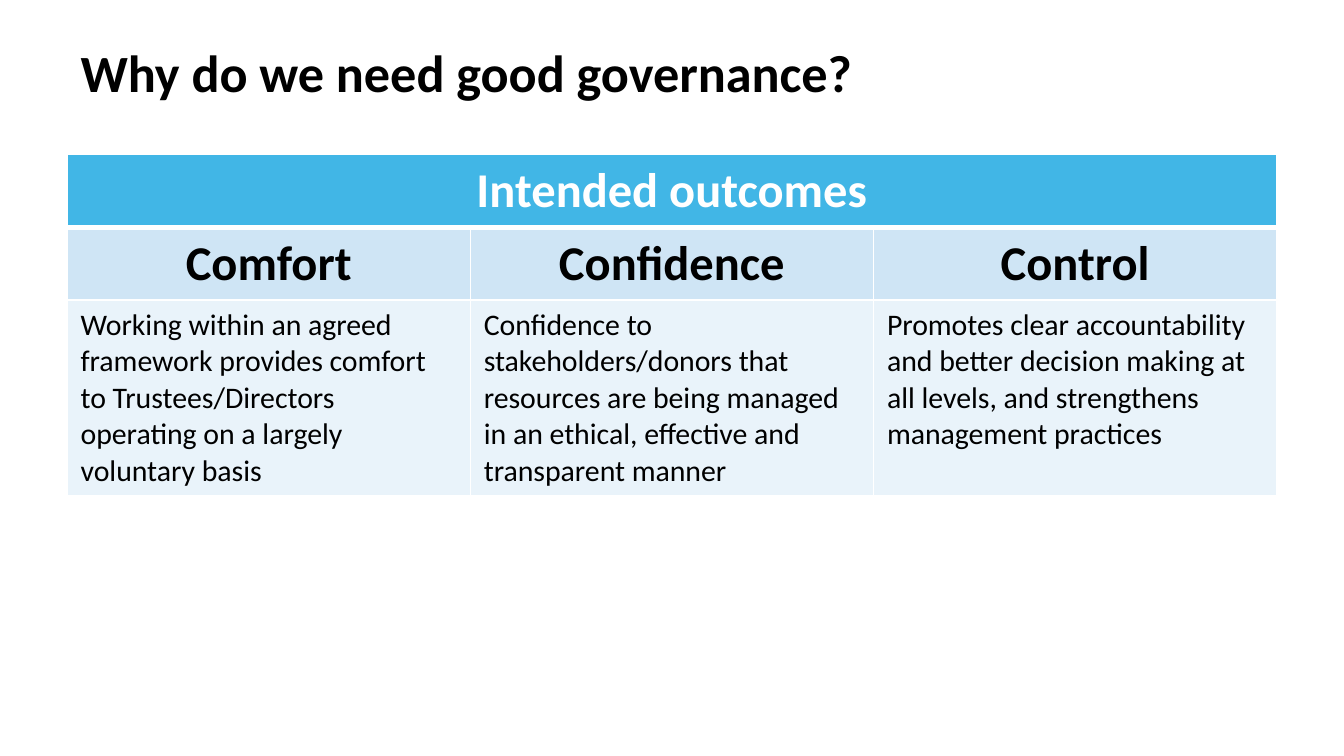
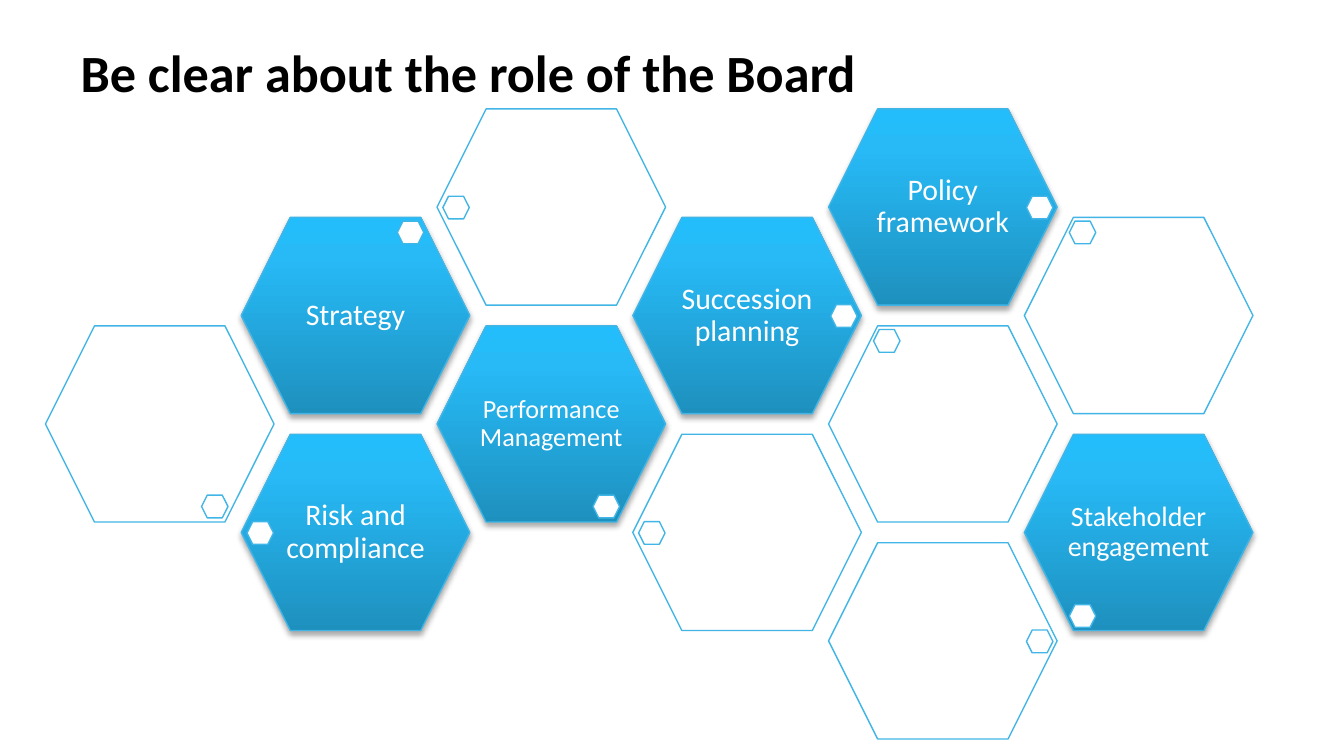
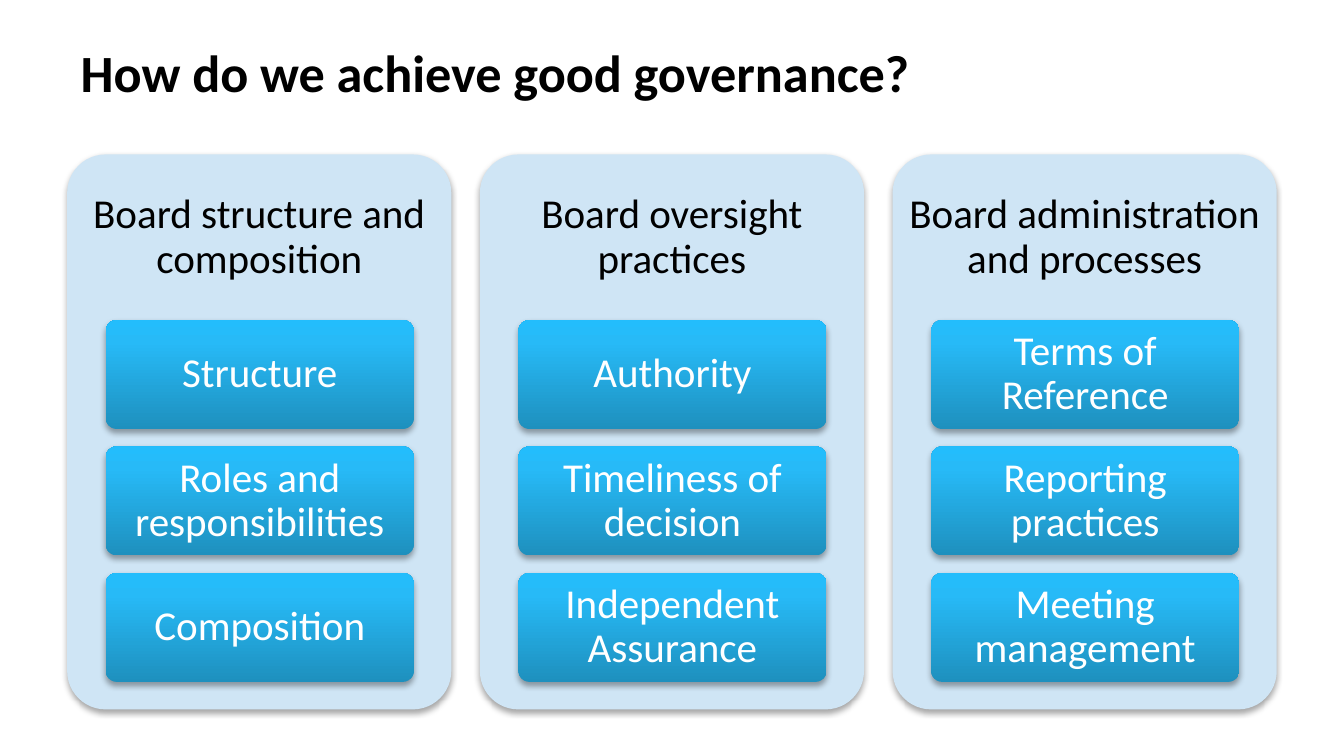
"""Builds three slides on good governance: outcomes, board role and practices."""
from copy import deepcopy

from lxml.etree import SubElement
from pptx import Presentation
from pptx.dml.color import RGBColor
from pptx.enum.shapes import MSO_SHAPE
from pptx.enum.text import MSO_ANCHOR as Anchor, PP_ALIGN as Align
from pptx.oxml.ns import qn
from pptx.util import Cm, Pt

FONT = "Calibri"
COLORS = {
    "text": "000000",
    "white": "FFFFFF",
    "accent": "41B6E6",
    "pale": "CFE5F5",
    "paler": "E9F3FA",
    "shadow": "000000",
}
GRADIENT = [(0, "1E90BE"), (0.8, "27BAF7"), (1, "23BDFC")]
MARGIN, CONTENT_WIDTH, CONTENT_TOP = 1.27, 22.86, 2.92

OUTCOMES = {
    "Comfort": "Working within an agreed framework provides comfort to "
               "Trustees/Directors operating on a largely voluntary basis",
    "Confidence": "Confidence to stakeholders/donors that resources are being "
                  "managed in an ethical, effective and transparent manner",
    "Control": "Promotes clear accountability and better decision making at "
               "all levels, and strengthens management practices",
}

HEXAGON_WIDTH, HEXAGON_HEIGHT = 4.32, 3.71
MARKER_OFFSETS = {
    "left": (0.11, 1.65),
    "right": (3.74, 1.65),
    "top left": (0.85, 0.07),
    "top right": (2.95, 0.07),
    "bottom left": (0.85, 3.22),
    "bottom right": (2.95, 3.2),
}
BOARD_ROLES = [
    (1, 3, "left", "Risk and compliance", 16),
    (0, 2, "bottom right", None, None),
    (2, 2, "bottom right", "Performance Management", 14),
    (3, 3, "left", None, None),
    (1, 1, "top right", "Strategy", 16),
    (2, 0, "left", None, None),
    (3, 1, "right", "Succession planning", 16),
    (4, 2, "top left", None, None),
    (4, 0, "right", "Policy framework", 16),
    (5, 1, "top left", None, None),
    (5, 3, "bottom left", "Stakeholder engagement", 15),
    (4, 4, "right", None, None),
]

PRACTICES = {
    "Board structure and composition":
        ["Structure", "Roles and responsibilities", "Composition"],
    "Board oversight practices":
        ["Authority", "Timeliness of decision", "Independent Assurance"],
    "Board administration and processes":
        ["Terms of Reference", "Reporting practices", "Meeting management"],
}


def rgb(name):
    return RGBColor.from_string(COLORS[name])


def format_paragraph(paragraph, size, color, bold=False, align=Align.LEFT):
    paragraph.alignment = align
    font = paragraph.font
    font.name, font.size, font.bold = FONT, Pt(size), bold
    font.color.rgb = rgb(color)


def add_titled_slide(presentation, text):
    slide = presentation.slides.add_slide(presentation.slide_layouts[5])
    title = slide.shapes.title
    title.left, title.top = Cm(MARGIN), Cm(0.15)
    title.width, title.height = Cm(CONTENT_WIDTH), Cm(2.39)
    title.text_frame.text = text
    title.text_frame.vertical_anchor = Anchor.MIDDLE
    format_paragraph(title.text_frame.paragraphs[0], 28, "text", bold=True)
    return slide


def add_flat_shape(slide, kind, left, top, width, height, fill, outlined=False):
    shape = slide.shapes.add_shape(kind, Cm(left), Cm(top), Cm(width), Cm(height))
    shape.shadow.inherit = False
    shape.fill.solid()
    shape.fill.fore_color.rgb = rgb(fill)
    if outlined:
        shape.line.color.rgb = rgb("accent")
        shape.line.width = Pt(0.75)
    else:
        shape.line.fill.background()
    return shape


def apply_gradient(shape):
    fill = shape.fill
    fill.gradient()
    fill.gradient_angle = 90
    stop_list = shape._element.spPr.find(qn("a:gradFill")).find(qn("a:gsLst"))
    stop_list.append(deepcopy(stop_list[-1]))
    for stop, (position, color) in zip(fill.gradient_stops, GRADIENT):
        stop.position = position
        stop.color.rgb = RGBColor.from_string(color)


def add_shadow(shape):
    effects = shape._element.spPr.find(qn("a:effectLst"))
    shadow = SubElement(effects, qn("a:outerShdw"), blurRad="40000",
                        dist="23000", dir="5400000", rotWithShape="0")
    color = SubElement(shadow, qn("a:srgbClr"), val=COLORS["shadow"])
    SubElement(color, qn("a:alpha"), val="35000")


def set_transparency(shape, opacity):
    color = shape._element.spPr.find(qn("a:solidFill")).find(qn("a:srgbClr"))
    SubElement(color, qn("a:alpha"), val=str(opacity * 1000))


def write_label(shape, text, size, color, side, top, bottom):
    frame = shape.text_frame
    frame.word_wrap = True
    frame.vertical_anchor = Anchor.MIDDLE
    frame.margin_left = frame.margin_right = Cm(side)
    frame.margin_top, frame.margin_bottom = Cm(top), Cm(bottom)
    frame.text = text
    paragraph = frame.paragraphs[0]
    paragraph.line_spacing = 0.9
    format_paragraph(paragraph, size, color, align=Align.CENTER)


def set_borders(cell, top, bottom):
    properties = cell._tc.get_or_add_tcPr()
    for side, width in (("L", 1), ("R", 1), ("T", top), ("B", bottom)):
        line = SubElement(properties, qn(f"a:ln{side}"), w=str(Pt(width)))
        fill = SubElement(line, qn("a:solidFill"))
        SubElement(fill, qn("a:srgbClr"), val=COLORS["white"])


def add_outcomes_table(slide):
    row_styles = [
        (1.3, "accent", 26, "white", True, Align.CENTER, 1, 3),
        (1.35, "pale", 26, "text", True, Align.CENTER, 3, 1),
        (3.7, "paler", 16, "text", False, Align.LEFT, 1, 1),
    ]
    rows = [["Intended outcomes", "", ""], list(OUTCOMES), list(OUTCOMES.values())]
    height = sum(style[0] for style in row_styles)
    table = slide.shapes.add_table(3, 3, Cm(MARGIN), Cm(CONTENT_TOP),
                                   Cm(CONTENT_WIDTH), Cm(height)).table
    table.cell(0, 0).merge(table.cell(0, 2))
    for row, texts, style in zip(table.rows, rows, row_styles):
        row_height, fill, size, color, bold, align, top, bottom = style
        row.height = Cm(row_height)
        for cell, text in zip(row.cells, texts):
            set_borders(cell, top, bottom)
            cell.fill.solid()
            cell.fill.fore_color.rgb = rgb(fill)
            cell.text = text
            format_paragraph(cell.text_frame.paragraphs[0], size, color, bold, align)


def add_role_hexagon(slide, column, row, marker, text, size):
    left, top = 0.86 + 3.7 * column, 2.06 + 2.05 * row
    hexagon = add_flat_shape(slide, MSO_SHAPE.HEXAGON, left, top,
                             HEXAGON_WIDTH, HEXAGON_HEIGHT, "white", outlined=True)
    if text:
        apply_gradient(hexagon)
        add_shadow(hexagon)
        write_label(hexagon, text, size, "white", 0, 0.05, 0.05)
    else:
        set_transparency(hexagon, 90)
    offset_x, offset_y = MARKER_OFFSETS[marker]
    add_flat_shape(slide, MSO_SHAPE.HEXAGON, left + offset_x, top + offset_y,
                   0.5, 0.43, "white", outlined=True)


def add_rounded_box(slide, left, top, width, height):
    box = add_flat_shape(slide, MSO_SHAPE.ROUNDED_RECTANGLE,
                         left, top, width, height, "pale")
    box.adjustments[0] = 0.1
    add_shadow(box)
    return box


def add_practice_panel(slide, index, heading, practices):
    left = MARGIN + 7.8 * index
    panel = add_rounded_box(slide, left, CONTENT_TOP, 7.26, 10.49)
    write_label(panel, heading, 22, "text", 0.02, 0.02, 7.36)
    for position, practice in enumerate(practices):
        card = add_rounded_box(slide, left + 0.73, 6.05 + 2.39 * position, 5.82, 2.06)
        apply_gradient(card)
        write_label(card, practice, 22, "white", 0.15, 0.13, 0.13)


def main():
    presentation = Presentation()
    presentation.slide_width, presentation.slide_height = Cm(25.4), Cm(14.29)

    add_outcomes_table(add_titled_slide(presentation, "Why do we need good governance?"))

    roles_slide = add_titled_slide(presentation, "Be clear about the role of the Board")
    for role in BOARD_ROLES:
        add_role_hexagon(roles_slide, *role)

    practices_slide = add_titled_slide(presentation, "How do we achieve good governance?")
    for index, (heading, practices) in enumerate(PRACTICES.items()):
        add_practice_panel(practices_slide, index, heading, practices)

    presentation.save("out.pptx")


if __name__ == "__main__":
    main()
